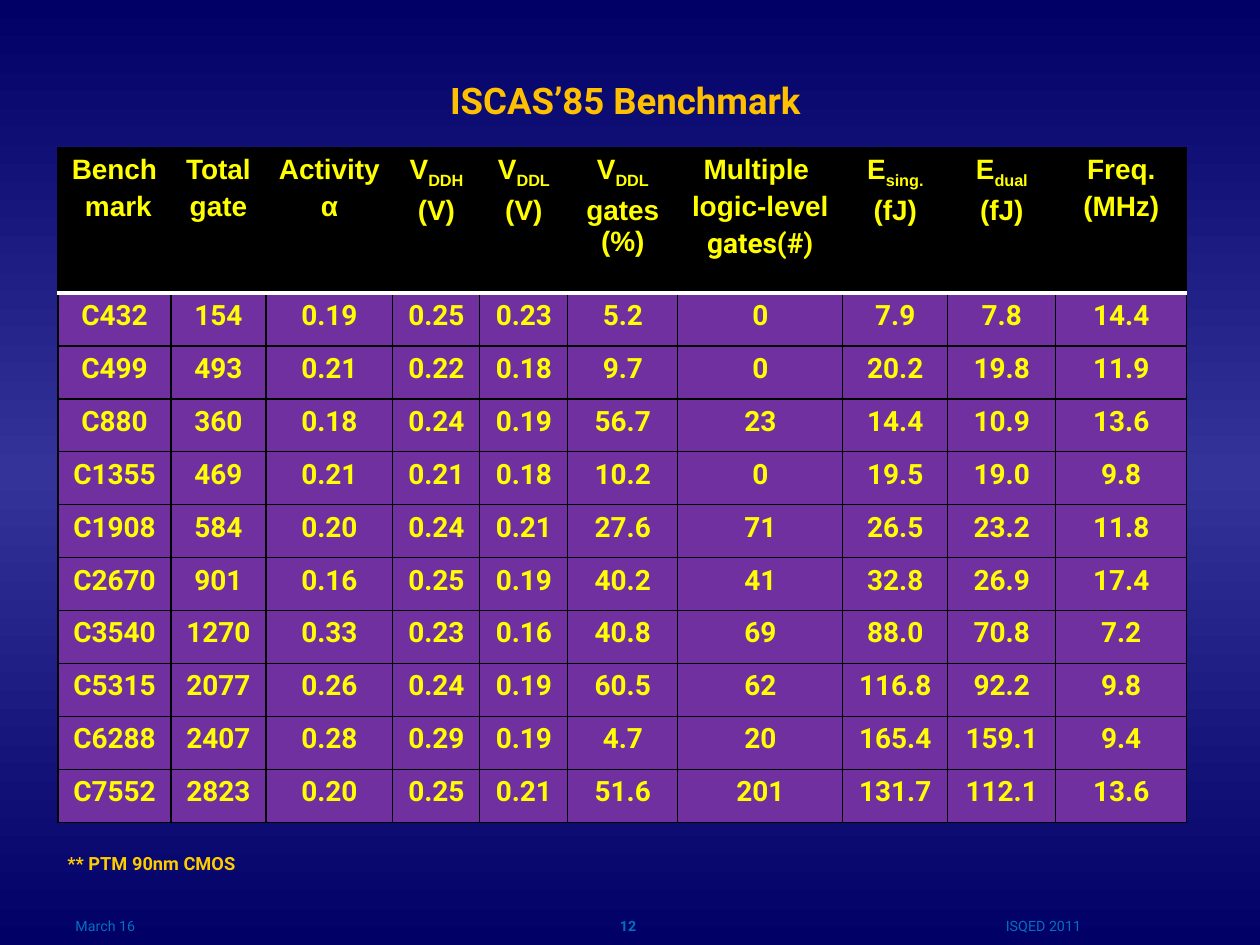
from copy import deepcopy

from lxml.etree import SubElement
from pptx import Presentation
from pptx.dml.color import RGBColor
from pptx.enum.text import MSO_ANCHOR, PP_ALIGN
from pptx.oxml.ns import qn
from pptx.util import Pt

EMU_PER_PX = 914400 / 126
SUBSCRIPT = "-25000"
YELLOW, BLACK, WHITE, PURPLE = "FFFF00", "000000", "FFFFFF", "7030A0"
FOOTER_BLUE = "0070C0"

COLUMN_WIDTHS = [113, 95, 127, 87, 88, 110, 165, 105, 108, 131]
HEADER_HEIGHT, ROW_HEIGHT = 145, 53

# An underscore starts a subscript.
HEADERS = [
    ["Bench", " mark"],
    ["Total", "gate"],
    ["Activity", "α"],
    ["V_DDH", "(V)"],
    ["V_DDL", "(V)"],
    ["V_DDL", "gates (%)"],
    ["Multiple ", "logic-level", "gates(#)"],
    ["E_sing.", "(fJ)"],
    ["E_dual", "(fJ)"],
    ["Freq.", "(MHz)"],
]
BENCHMARKS = """
C432 154 0.19 0.25 0.23 5.2 0 7.9 7.8 14.4
C499 493 0.21 0.22 0.18 9.7 0 20.2 19.8 11.9
C880 360 0.18 0.24 0.19 56.7 23 14.4 10.9 13.6
C1355 469 0.21 0.21 0.18 10.2 0 19.5 19.0 9.8
C1908 584 0.20 0.24 0.21 27.6 71 26.5 23.2 11.8
C2670 901 0.16 0.25 0.19 40.2 41 32.8 26.9 17.4
C3540 1270 0.33 0.23 0.16 40.8 69 88.0 70.8 7.2
C5315 2077 0.26 0.24 0.19 60.5 62 116.8 92.2 9.8
C6288 2407 0.28 0.29 0.19 4.7 20 165.4 159.1 9.4
C7552 2823 0.20 0.25 0.21 51.6 201 131.7 112.1 13.6
"""


def px(length):
    """Turn px into EMU."""
    return round(length * EMU_PER_PX)


def rgb(color):
    return RGBColor.from_string(color)


def add_run(paragraph, text, size, color, bold=True, font="Roboto", lowered=False):
    run = paragraph.add_run()
    run.text = text
    formats = {"name": font, "size": Pt(size), "bold": bold}
    for attribute, value in formats.items():
        setattr(run.font, attribute, value)
    run.font.color.rgb = rgb(color)
    if lowered:
        run._r.get_or_add_rPr().set("baseline", SUBSCRIPT)


def paint_background(slide):
    """Fill the slide with a vertical gradient, lightest in the middle."""
    fill = slide.background.fill
    fill.gradient()
    fill.gradient_angle = 270
    stop_list = slide._element.xpath(".//a:gsLst")[0]
    stop_list.append(deepcopy(stop_list[0]))
    stops = [(0, "000066"), (0.5, "333399"), (1, "000066")]
    for stop, (position, color) in zip(fill.gradient_stops, stops):
        stop.position = position
        stop.color.rgb = rgb(color)


def add_caption(slide, box, text, size, color, bold=False,
                align=PP_ALIGN.CENTER, anchor=MSO_ANCHOR.TOP):
    """Place one line of lowered text in the box."""
    frame = slide.shapes.add_textbox(*map(px, box)).text_frame
    frame.word_wrap = True
    frame.vertical_anchor = anchor
    paragraph = frame.paragraphs[0]
    paragraph.alignment = align
    add_run(paragraph, text, size, color, bold, lowered=True)


def set_borders(cell, **special):
    """Draw thin black edges, except those given as (color, points)."""
    properties = cell._tc.get_or_add_tcPr()
    for edge in ("lnL", "lnR", "lnT", "lnB"):
        color, points = special.get(edge, (BLACK, 0.75))
        line = SubElement(properties, qn(f"a:{edge}"), w=str(Pt(points)))
        solid = SubElement(line, qn("a:solidFill"))
        SubElement(solid, qn("a:srgbClr"), val=color)


def fill_cell(cell, lines, fill, header):
    cell.fill.solid()
    cell.fill.fore_color.rgb = rgb(fill)
    frame = cell.text_frame
    for number, line in enumerate(lines):
        paragraph = frame.add_paragraph() if number else frame.paragraphs[0]
        paragraph.alignment = PP_ALIGN.CENTER
        before = SubElement(paragraph._p.get_or_add_pPr(), qn("a:spcBef"))
        SubElement(before, qn("a:spcPct"), val="20000")
        font = "Arial" if header and line != "gates(#)" else "Roboto"
        for part, text in enumerate(line.split("_")):
            add_run(paragraph, text, 16, YELLOW, font=font, lowered=part > 0)


def add_benchmark_table(slide, left, top):
    rows = [HEADERS] + [[[value] for value in record.split()]
                        for record in BENCHMARKS.strip().splitlines()]
    heights = [HEADER_HEIGHT] + [ROW_HEIGHT] * (len(rows) - 1)
    box = (left, top, sum(COLUMN_WIDTHS), sum(heights))
    table = slide.shapes.add_table(
        len(rows), len(COLUMN_WIDTHS), *map(px, box)).table
    table.horz_banding = False
    for column, width in zip(table.columns, COLUMN_WIDTHS):
        column.width = px(width)
    divider = (WHITE, 2)
    special_edges = {0: {"lnB": divider}, 1: {"lnT": divider}}
    for r, (row, height) in enumerate(zip(rows, heights)):
        table.rows[r].height = px(height)
        for c, lines in enumerate(row):
            cell = table.cell(r, c)
            set_borders(cell, **special_edges.get(r, {}))
            fill_cell(cell, lines, PURPLE if r else BLACK, header=r == 0)


def add_footer(slide, top, height):
    add_caption(slide, (63, top, 294, height), "March 16", 14, FOOTER_BLUE,
                align=PP_ALIGN.LEFT)
    add_caption(slide, (844, top, 399, height), "ISQED 2011", 14, FOOTER_BLUE)
    add_caption(slide, (481, top, 294, height), "12", 14, FOOTER_BLUE, bold=True)


def main():
    deck = Presentation()
    deck.slide_width, deck.slide_height = px(1260), px(945)
    slide = deck.slides.add_slide(deck.slide_layouts[6])
    paint_background(slide)
    add_caption(slide, (63, 0, 1134, 158), "ISCAS’85 Benchmark ", 36, "FFC000",
                bold=True, anchor=MSO_ANCHOR.MIDDLE)
    add_benchmark_table(slide, 58, 148)
    add_caption(slide, (55, 825, 340, 50), "** PTM 90nm CMOS", 18, "FFCC00",
                bold=True, align=PP_ALIGN.LEFT)
    add_footer(slide, 895, 65)
    deck.save("out.pptx")


if __name__ == "__main__":
    main()
